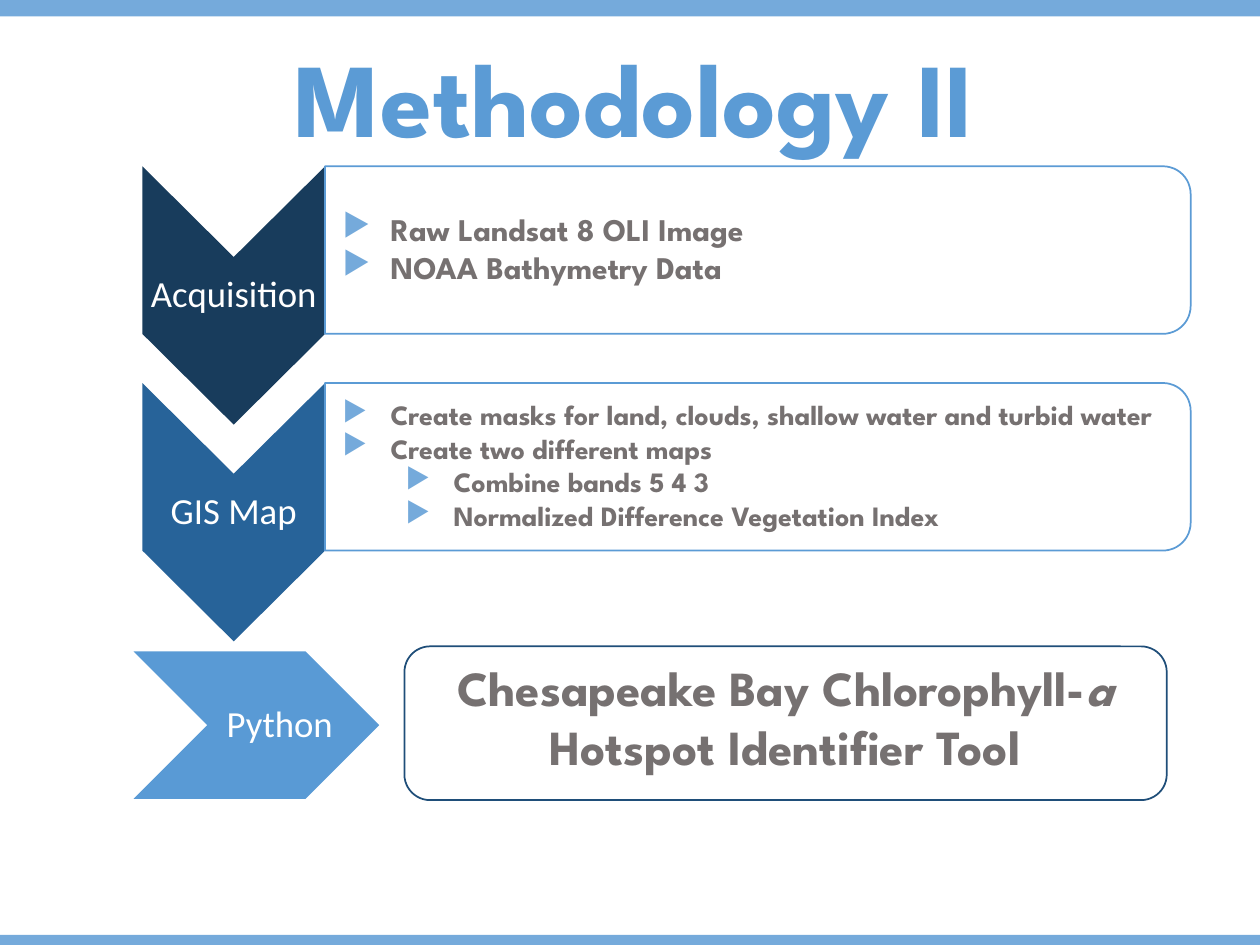
import math

import lxml.etree
import pptx
import pptx.dml.color
import pptx.enum.shapes
import pptx.enum.text
import pptx.oxml.ns
import pptx.util

Inches = pptx.util.Inches
Pt = pptx.util.Pt
SHAPES = pptx.enum.shapes.MSO_SHAPE
ALIGN = pptx.enum.text.PP_ALIGN
ANCHOR = pptx.enum.text.MSO_ANCHOR

TITLE = "Methodology II"
STAGES = [
    {"label": "Acquisition", "color": "183C5C", "style": "large_bullet",
     "points": [(0, "Raw Landsat 8 OLI Image"), (0, "NOAA Bathymetry Data")]},
    {"label": "GIS Map", "color": "276399", "style": "small_bullet",
     "points": [(0, "Create masks for land, clouds, shallow water and turbid water"),
                (0, "Create two different maps"),
                (1, "Combine bands 5 4 3"),
                (1, "Normalized Difference Vegetation Index")]},
]
SCRIPTING = "Python"
TOOL = [("Chesapeake Bay Chlorophyll-", False), ("a ", True),
        ("Hotspot Identifier Tool", False)]


class Theme:
    band = "75AADB"
    python = "599AD5"
    panel = "FFFFFF"
    panel_line = "5B9BD5"
    tool_line = "1F4E79"
    text = {
        "title": ({"name": "League Spartan", "size": Pt(60), "bold": True}, "5B9BD5"),
        "label": ({"name": "Calibri", "size": Pt(21), "bold": False}, "FFFFFF"),
        "large_bullet": ({"name": "League Spartan", "size": Pt(18), "bold": True}, "767171"),
        "small_bullet": ({"name": "League Spartan", "size": Pt(16), "bold": True}, "767171"),
        "tool": ({"name": "League Spartan", "size": Pt(28), "bold": True}, "767171"),
    }


def rgb(value):
    return pptx.dml.color.RGBColor.from_string(value)


def apply(target, values):
    for key, value in values.items():
        setattr(target, key, value)


def paint(shape, fill=None, line=None):
    shape.shadow.inherit = False
    if fill:
        shape.fill.solid()
        shape.fill.fore_color.rgb = rgb(fill)
    else:
        shape.fill.background()
    if line:
        shape.line.color.rgb = rgb(line)
        shape.line.width = Pt(1)
    else:
        shape.line.fill.background()
    return shape


def preset(kind, box, fill=None, line=None):
    return paint(slide.shapes.add_shape(kind, *map(Inches, box)), fill, line)


def outline(points, fill, line=None):
    start, *rest = [(Inches(x), Inches(y)) for x, y in points]
    builder = slide.shapes.build_freeform(*start)
    builder.add_line_segments(rest, close=True)
    return paint(builder.convert_to_shape(), fill, line)


def frame_of(shape, insets=(0.1, 0.05, 0.1, 0.05), anchor=ANCHOR.TOP):
    frame = shape.text_frame
    sides = ("margin_left", "margin_top", "margin_right", "margin_bottom")
    apply(frame, dict(zip(sides, map(Inches, insets))))
    apply(frame, {"word_wrap": True, "vertical_anchor": anchor})
    return frame


def text_box(box):
    return frame_of(slide.shapes.add_textbox(*map(Inches, box)))


def write(paragraph, text, style, italic=False, **layout):
    apply(paragraph, layout)
    run = paragraph.add_run()
    run.text = text
    font_values, color = Theme.text[style]
    apply(run.font, {**font_values, "italic": italic})
    run.font.color.rgb = rgb(color)


def add_bullet(paragraph, level):
    properties = paragraph._p.get_or_add_pPr()
    properties.set("marL", str(Inches(0.38 + 0.5 * level)))
    properties.set("indent", str(-Inches(0.38)))
    qn = pptx.oxml.ns.qn
    color = lxml.etree.SubElement(properties, qn("a:buClr"))
    lxml.etree.SubElement(color, qn("a:srgbClr"), val=Theme.band)
    lxml.etree.SubElement(properties, qn("a:buChar"), char="▶")


def arrow_points(left, right, top, height, notch):
    middle, bottom = (left + right) / 2, top + height
    return [(right, top), (right, bottom), (middle, bottom + notch),
            (left, bottom), (left, top), (middle, top + notch)]


def panel_points(left, right, top, height, radius, steps=12):
    bottom = top + height
    points = [(left, bottom), (left, top)]
    for center_y, first in ((top + radius, -90), (bottom - radius, 0)):
        for step in range(steps + 1):
            angle = math.radians(first + 90 * step / steps)
            points.append((right - radius + radius * math.cos(angle),
                           center_y + radius * math.sin(angle)))
    return points


deck = pptx.Presentation()
apply(deck, {"slide_width": Inches(10), "slide_height": Inches(7.5)})
slide = deck.slides.add_slide(deck.slide_layouts[6])

for top, height in ((0, 0.13), (7.42, 0.08)):
    preset(SHAPES.RECTANGLE, (0, top, 10, height), Theme.band)

title = text_box((1.06, 0.32, 7.95, 1.58))
write(title.paragraphs[0], TITLE, "title", alignment=ALIGN.CENTER, line_spacing=0.9)

python_arrow = preset(SHAPES.CHEVRON, (1.06, 5.17, 1.95, 1.17), Theme.python)
python_label = text_box((1.7, 5.51, 1.18, 0.45))
write(python_label.paragraphs[0], SCRIPTING, "label")

ARROW_LEFT, PANEL_LEFT, PANEL_RIGHT = 1.13, 2.58, 9.45
FIRST_TOP, PITCH, HEIGHT = 1.32, 1.72, 1.33
for index, stage in enumerate(STAGES):
    top = FIRST_TOP + index * PITCH
    arrow = outline(arrow_points(ARROW_LEFT, PANEL_LEFT, top, HEIGHT, 0.72), stage["color"])
    label = frame_of(arrow, (0.01, 0.7, 0.01, 0.7), ANCHOR.MIDDLE)
    write(label.paragraphs[0], stage["label"], "label",
          alignment=ALIGN.CENTER, line_spacing=0.9)

    panel = outline(panel_points(PANEL_LEFT, PANEL_RIGHT, top, HEIGHT, 0.22),
                    Theme.panel, Theme.panel_line)
    points = frame_of(panel, (0.14, 0.07, 0.07, 0.07), ANCHOR.MIDDLE)
    for number, (level, text) in enumerate(stage["points"]):
        point = points.add_paragraph() if number else points.paragraphs[0]
        add_bullet(point, level)
        write(point, text, stage["style"], level=level, alignment=ALIGN.LEFT,
              line_spacing=0.9, space_before=Pt(2 if number else 0))

preset(SHAPES.ROUNDED_RECTANGLE, (3.21, 5.13, 6.05, 1.22), line=Theme.tool_line)
tool = text_box((3.12, 5.17, 6.22, 1.04))
for text, italic in TOOL:
    write(tool.paragraphs[0], text, "tool", italic, alignment=ALIGN.CENTER)

deck.save("out.pptx")
